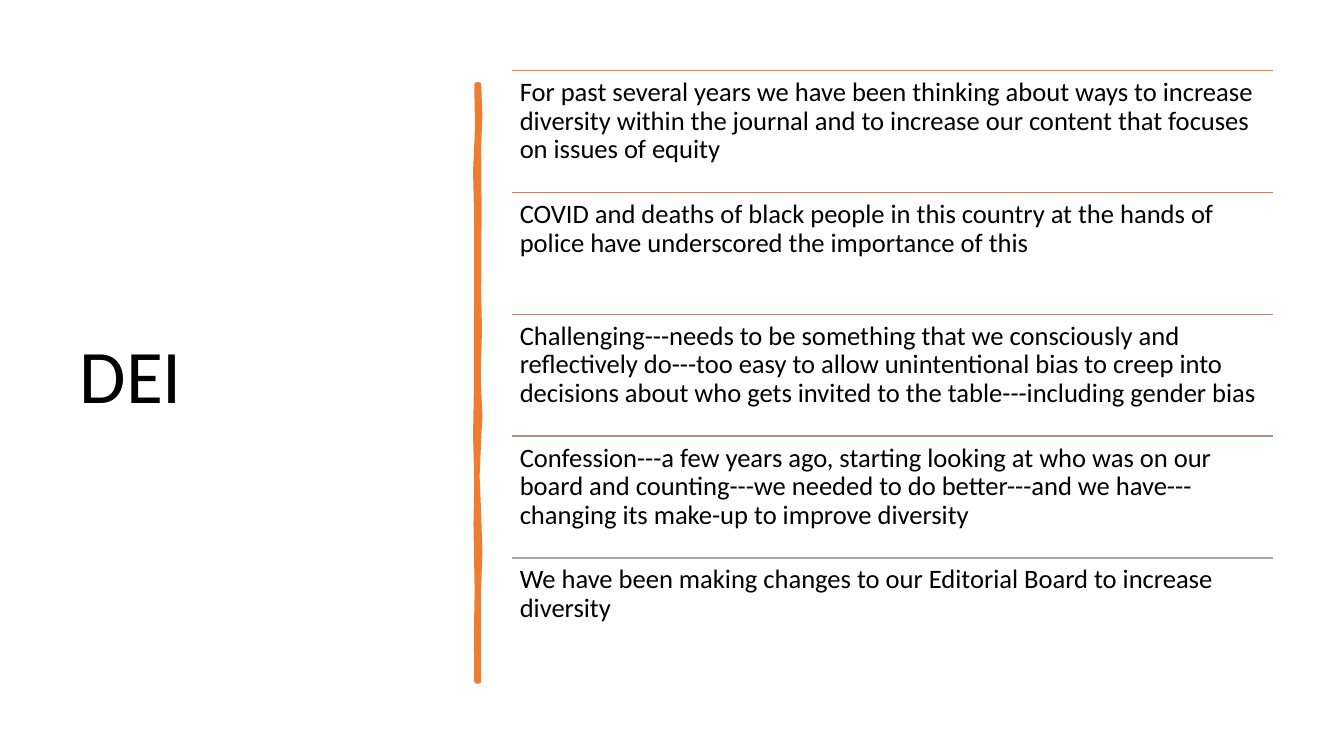
"""Build the DEI slide: a title, a brushed divider and five ruled statements."""
from lxml.etree import SubElement
from pptx import Presentation
from pptx.dml.color import RGBColor
from pptx.enum.shapes import MSO_CONNECTOR
from pptx.enum.text import MSO_ANCHOR, MSO_AUTO_SIZE, PP_ALIGN
from pptx.oxml.ns import qn
from pptx.util import Cm, Pt

BLACK = RGBColor(0x00, 0x00, 0x00)
ORANGE = RGBColor(0xED, 0x7D, 0x31)
COPPER = RGBColor(0xD8, 0x7A, 0x51)
CLAY = RGBColor(0xC4, 0x81, 0x70)
ROSE = RGBColor(0xB4, 0x90, 0x8B)
GRAY = RGBColor(0xA5, 0xA5, 0xA5)

STATEMENTS = [
    (ORANGE, "For past several years we have been thinking about ways to increase diversity "
             "within the journal and to increase our content that focuses on issues of equity"),
    (COPPER, "COVID and deaths of black people in this country at the hands of police have "
             "underscored the importance of this"),
    (CLAY, "Challenging---needs to be something that we consciously and reflectively do---too "
           "easy to allow unintentional bias to creep into decisions about who gets invited to "
           "the table---including gender bias"),
    (ROSE, "Confession---a few years ago, starting looking at who was on our board and "
           "counting---we needed to do better---and we have---changing its make-up to improve "
           "diversity"),
    (GRAY, "We have been making changes to our Editorial Board to increase diversity"),
]
LIST_LEFT, LIST_TOP, LIST_WIDTH, ROW_HEIGHT = 12.9, 1.78, 19.18, 3.07

BRUSH_OUTLINE = [
    (12.07, 2.13), (12.1, 2.9), (12.07, 3.7), (12.08, 5.3), (12.07, 7.4), (12.09, 8.3),
    (12.07, 9.05), (12.06, 9.5), (12.1, 10.5), (12.07, 11.07), (12.03, 12), (12.07, 12.95),
    (12.1, 13.9), (12.07, 14.83), (12.07, 17.17),
    (12.01, 17.17), (12, 16), (12.02, 14.9), (11.99, 13.2), (12.01, 12.1), (11.98, 11),
    (12, 9.8), (12, 8.5), (12.01, 6.3), (12, 5.2), (11.98, 4.3), (12.03, 3.2), (12.01, 2.13),
]


def format_paragraph(para, size):
    """Apply the slide's shared text style to a paragraph."""
    para.alignment = PP_ALIGN.LEFT
    para.line_spacing = 0.9
    para.font.name = "Calibri"
    para.font.size = Pt(size)
    para.font.color.rgb = BLACK


def set_title(page, text):
    """Place and style the title placeholder."""
    title = page.shapes.title
    title.left, title.top, title.width, title.height = Cm(1.75), Cm(1.78), Cm(9.5), Cm(15.52)
    frame = title.text_frame
    frame.text = text
    frame.auto_size = MSO_AUTO_SIZE.NONE
    frame.vertical_anchor = MSO_ANCHOR.MIDDLE
    format_paragraph(frame.paragraphs[0], 54)


def add_brush_stroke(page):
    """Draw the uneven vertical divider."""
    points = [(Cm(x), Cm(y)) for x, y in BRUSH_OUTLINE]
    builder = page.shapes.build_freeform(*points[0])
    builder.add_line_segments(points[1:])
    stroke = builder.convert_to_shape()
    stroke.shadow.inherit = False
    stroke.fill.solid()
    stroke.fill.fore_color.rgb = ORANGE
    stroke.line.color.rgb = ORANGE
    stroke.line.width = Pt(3.25)
    SubElement(stroke.line._get_or_add_ln(), qn("a:round"))


def add_rule(page, top, color):
    """Draw a thin horizontal rule above a statement."""
    rule = page.shapes.add_connector(
        MSO_CONNECTOR.STRAIGHT, Cm(LIST_LEFT), top, Cm(LIST_LEFT + LIST_WIDTH), top)
    rule.line.color.rgb = color
    rule.line.width = Pt(1)
    SubElement(rule._element.spPr, qn("a:effectLst"))


def add_statement(page, top, text):
    """Add one wrapped statement below its rule."""
    box = page.shapes.add_textbox(Cm(LIST_LEFT), top, Cm(LIST_WIDTH), Cm(ROW_HEIGHT))
    frame = box.text_frame
    frame.word_wrap = True
    frame.margin_left = frame.margin_right = frame.margin_top = frame.margin_bottom = Cm(0.2)
    frame.text = text
    format_paragraph(frame.paragraphs[0], 19)


def main():
    """Assemble and save the deck."""
    deck = Presentation()
    deck.slide_width, deck.slide_height = Cm(33.87), Cm(19.05)
    page = deck.slides.add_slide(deck.slide_layouts[5])
    set_title(page, "DEI")
    add_brush_stroke(page)
    for row, (color, text) in enumerate(STATEMENTS):
        top = Cm(LIST_TOP + row * ROW_HEIGHT)
        add_rule(page, top, color)
        add_statement(page, top, text)
    deck.save("out.pptx")


if __name__ == "__main__":
    main()
